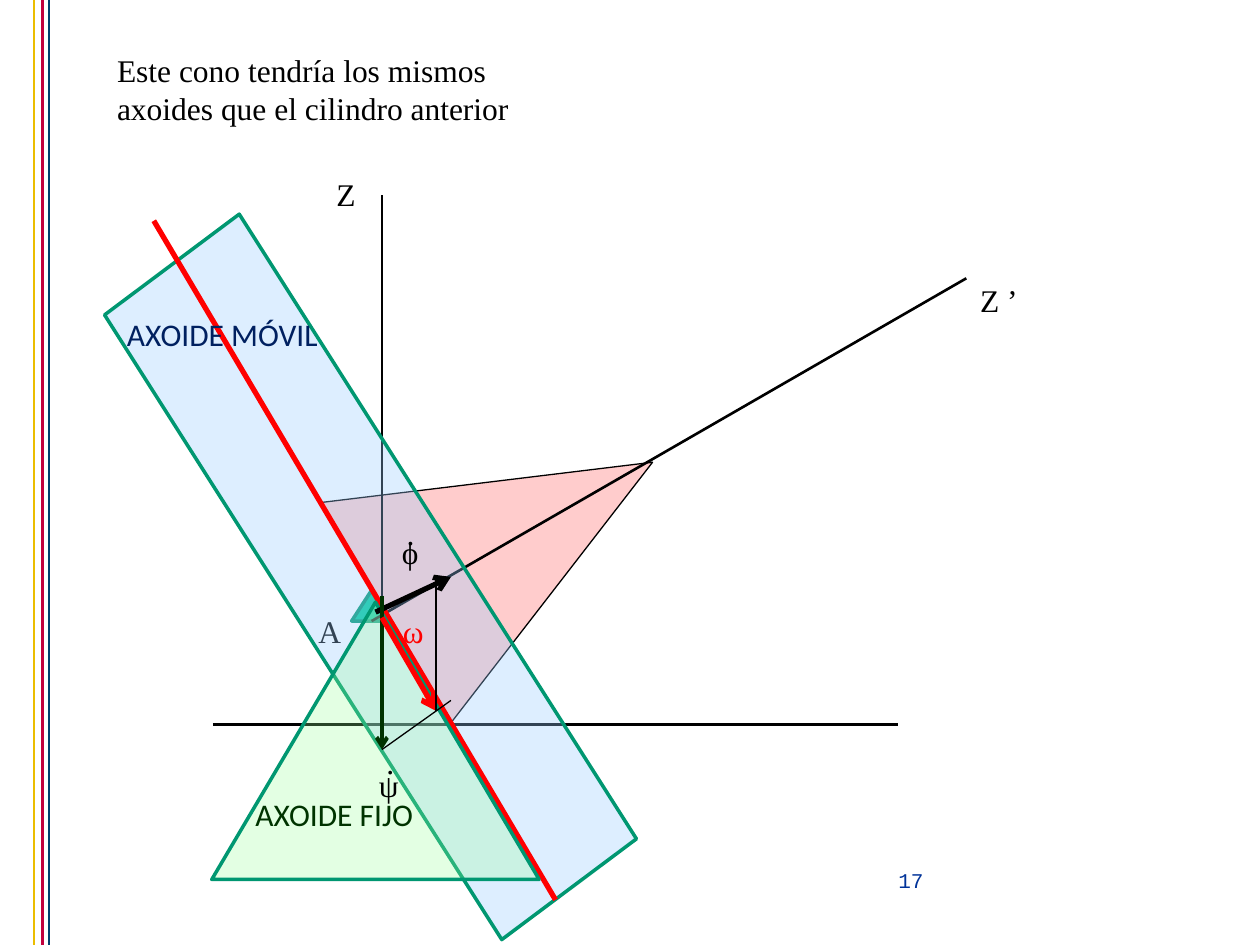
from lxml import etree
from pptx import Presentation
from pptx.dml.color import RGBColor
from pptx.enum.shapes import MSO_CONNECTOR, MSO_SHAPE
from pptx.enum.text import MSO_AUTO_SIZE, PP_ALIGN
from pptx.oxml.ns import qn
from pptx.util import Cm, Pt

STRAIGHT = MSO_CONNECTOR.STRAIGHT
TRIANGLE = MSO_SHAPE.ISOSCELES_TRIANGLE
PARALLELOGRAM = MSO_SHAPE.PARALLELOGRAM
LEFT, CENTER = PP_ALIGN.LEFT, PP_ALIGN.CENTER
FIT_SHAPE = MSO_AUTO_SIZE.SHAPE_TO_FIT_TEXT
SERIF, SANS, MONO = "Times New Roman", "Calibri", "Courier New"

COLORS = {
    "black": "000000",
    "red": "FF0000",
    "stripe_yellow": "EBBD00",
    "stripe_red": "C1003D",
    "stripe_blue": "003F6D",
    "number_blue": "003399",
    "navy": "002060",
    "dark_green": "003300",
    "outline_green": "009771",
    "teal": "00CC99",
    "pink": "FFCCCC",
    "light_blue": "99CCFF",
    "light_green": "99FF99",
}
SLIDE_WIDTH, SLIDE_HEIGHT = 25.4, 19.05
AXIS_X = 7.7
OMEGA_X, OMEGA_Y = 8.79, 14.33
PSI_Y = 15.11

presentation = Presentation()
presentation.slide_width = Cm(SLIDE_WIDTH)
presentation.slide_height = Cm(SLIDE_HEIGHT)
slide = presentation.slides.add_slide(presentation.slide_layouts[6])


def add_line(start_x, start_y, end_x, end_y, color, weight, arrow=False):
    connector = slide.shapes.add_connector(
        STRAIGHT, Cm(start_x), Cm(start_y), Cm(end_x), Cm(end_y))
    connector.line.color.rgb = RGBColor.from_string(COLORS[color])
    connector.line.width = Pt(weight)
    properties = connector._element.spPr
    if arrow:
        etree.SubElement(properties.find(qn("a:ln")), qn("a:tailEnd"), type="arrow")
    etree.SubElement(properties, qn("a:effectLst"))


def add_text(text, left, top, width, height=1.02, color="black",
             font=SERIF, size=18, alignment=LEFT):
    text_box = slide.shapes.add_textbox(Cm(left), Cm(top), Cm(width), Cm(height))
    frame = text_box.text_frame
    frame.word_wrap = True
    frame.auto_size = FIT_SHAPE
    paragraph = frame.paragraphs[0]
    paragraph.alignment = alignment
    run = paragraph.add_run()
    run.text = text
    run.font.name = font
    run.font.size = Pt(size)
    run.font.color.rgb = RGBColor.from_string(COLORS[color])


add_text("17", 17.63, 17.37, 1.47, 0.69, "number_blue", MONO, 12, CENTER)
for stripe_x, stripe_color in ((0.69, "stripe_yellow"), (0.86, "stripe_red"),
                               (0.99, "stripe_blue")):
    add_line(stripe_x, 0, stripe_x, SLIDE_HEIGHT, stripe_color, 1.5)

add_text("Este cono tendría los mismos axoides que el cilindro anterior",
         2.11, 0.91, 9.8, 1.8)
add_text("Z", 6.53, 3.4, 2.59)
add_text("Z ’", 19.51, 5.54, 2.59)
add_text("A", 6.17, 12.22, 2.59)
add_line(4.29, 14.61, 18.11, 14.61, "black", 1.5)

axes = [
    (19.48, 5.61, 7.49, 12.52, "black", 1.5),
    (AXIS_X, 3.94, AXIS_X, 14.63, "black", 1.5),
]
contact_line = [(3.1, 4.45, 11.2, 18.14, "red", 3)]
vectors = [
    (7.57, 12.34, 9.09, 11.63, "black", 3, True),
    (AXIS_X, 12.01, AXIS_X, PSI_Y, "dark_green", 2.25, True),
    (AXIS_X, 12.45, OMEGA_X, OMEGA_Y, "red", 3, True),
    (OMEGA_X, 11.63, OMEGA_X, OMEGA_Y, "black", 0.75),
    (9.09, 14.12, AXIS_X, PSI_Y, "black", 0.75),
]
bodies = [
    (TRIANGLE, 7.09, 11.91, 0.79, 0.61, 0, "teal", 100, "outline_green", 2, []),
    (TRIANGLE, 7.87, 7.75, 5.18, 6.2, 60.4, "pink", 100, "black", 0.75, axes),
    (PARALLELOGRAM, 5.21, 4.19, 4.52, 14.88, 323.2, "light_blue", 33,
     "outline_green", 2, contact_line),
    (TRIANGLE, 4.27, 12.14, 6.6, 5.59, 0, "light_green", 27,
     "outline_green", 2, vectors),
]
for (kind, left, top, width, height, rotation, fill, opacity,
     outline, weight, lines_above) in bodies:
    shape = slide.shapes.add_shape(kind, Cm(left), Cm(top), Cm(width), Cm(height))
    shape.shadow.inherit = False
    shape.rotation = rotation
    shape.fill.solid()
    shape.fill.fore_color.rgb = RGBColor.from_string(COLORS[fill])
    shape.line.color.rgb = RGBColor.from_string(COLORS[outline])
    shape.line.width = Pt(weight)
    if opacity < 100:
        fill_color = shape._element.spPr.find(qn("a:solidFill")).find(qn("a:srgbClr"))
        etree.SubElement(fill_color, qn("a:alpha"), val=str(opacity * 1000))
    for line in lines_above:
        add_line(*line)

add_text("AXOIDE MÓVIL", 2.31, 6.22, 4.95, color="navy", font=SANS)
add_text("AXOIDE FIJO", 4.9, 15.9, 4.19, color="dark_green", font=SANS)
add_text(".", 7.54, 14.86, 1.7)
add_text("ψ", 7.39, 15.32, 2.01)
add_text("ω", 7.87, 12.22, 2.01, color="red")
add_text("ϕ", 7.85, 10.62, 1.4)
add_text(".", 7.95, 10.24, 1.52)

presentation.save("out.pptx")
